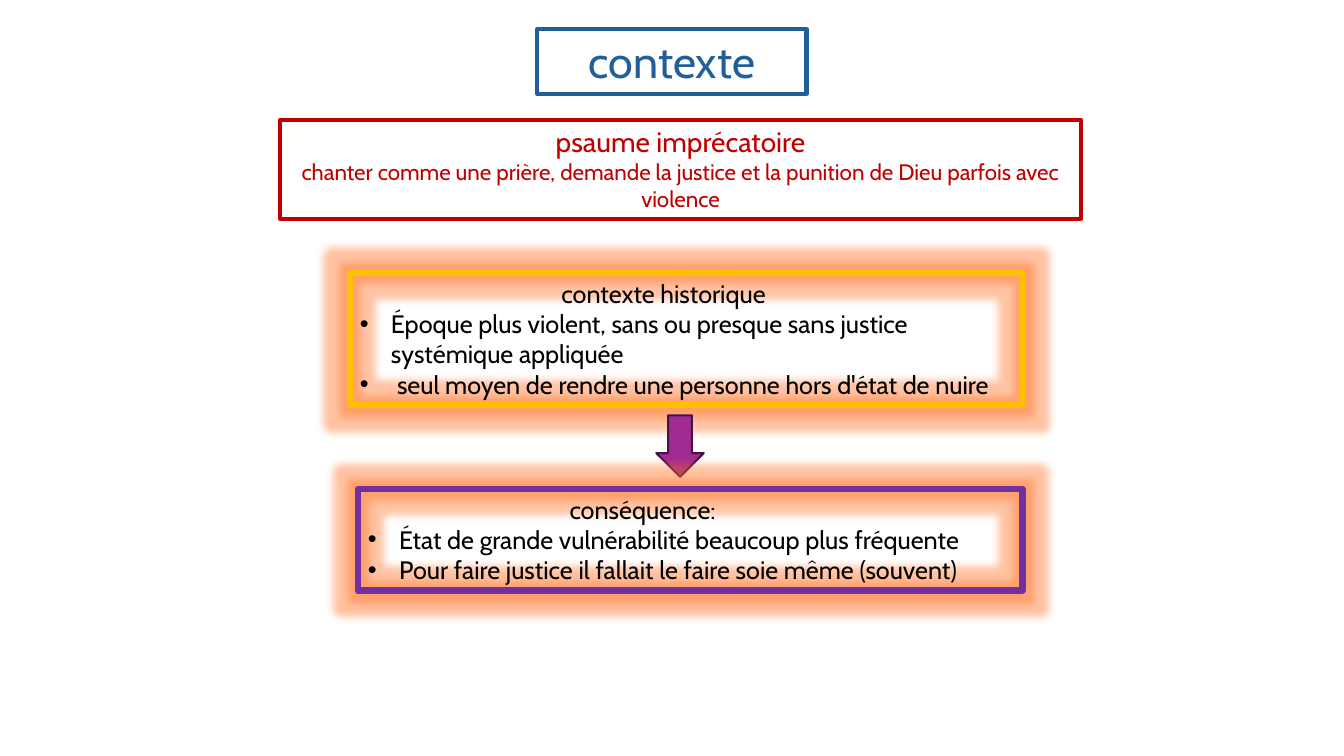
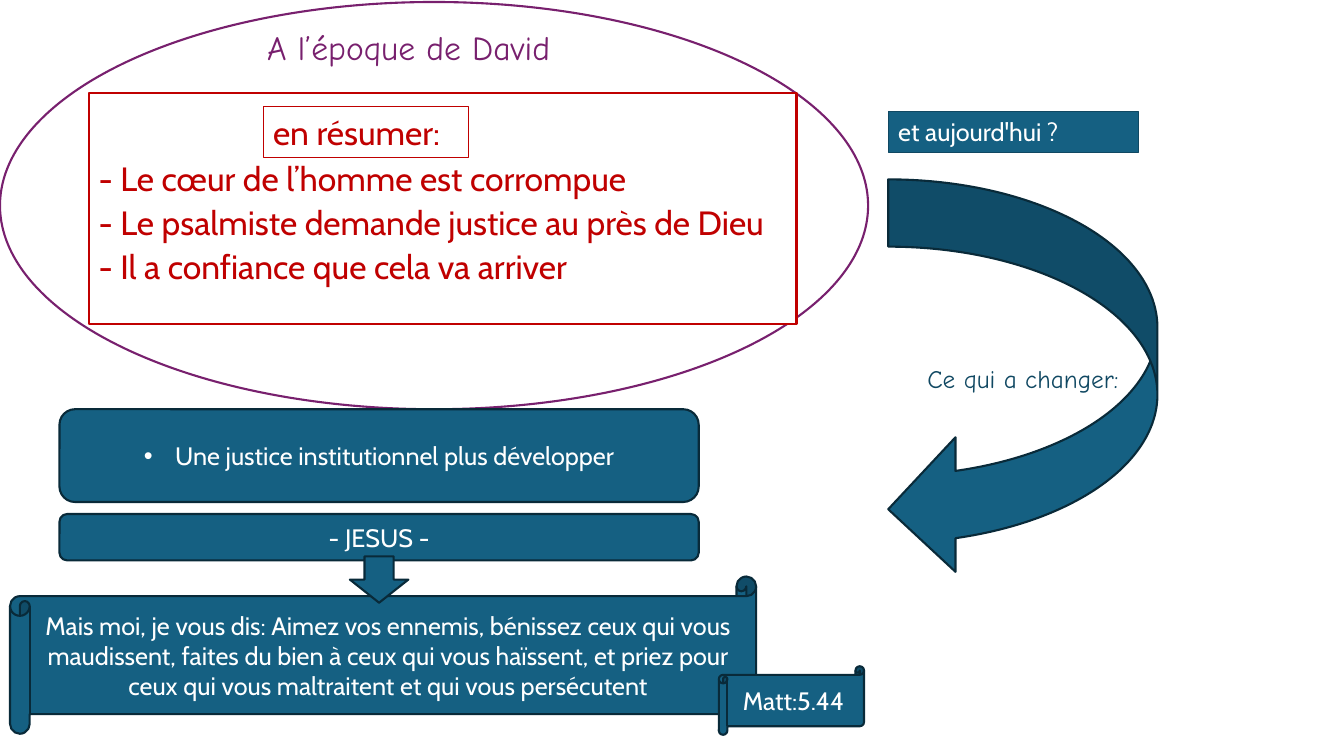
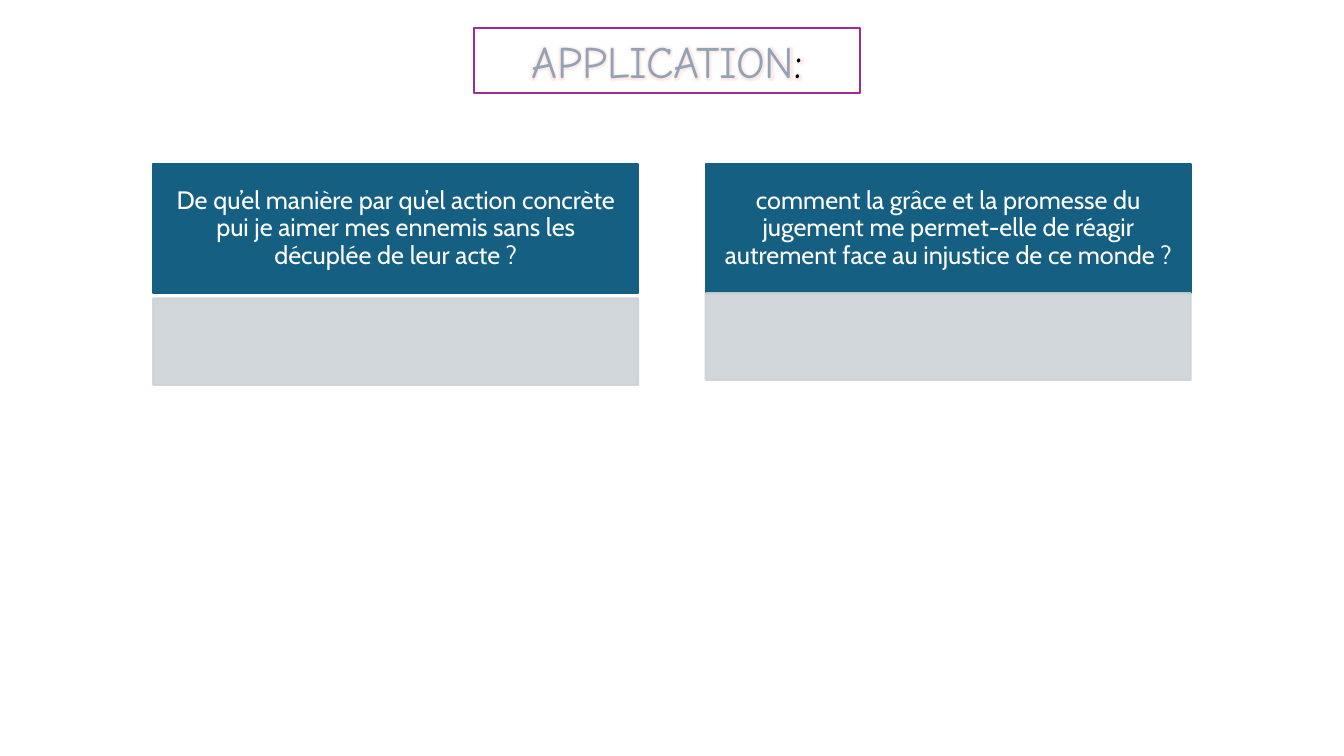
from lxml.etree import SubElement
from pptx import Presentation
from pptx.dml.color import RGBColor
from pptx.enum.shapes import MSO_SHAPE as SHAPE
from pptx.enum.text import MSO_ANCHOR as ANCHOR, PP_ALIGN as ALIGN
from pptx.oxml import parse_xml
from pptx.oxml.ns import nsdecls, qn
from pptx.util import Inches, Pt

SANS, HAND = "Cabin", "Comic Neue"
WHITE, BLACK, RED = "FFFFFF", "000000", "C00000"
TEAL, TEAL_DARK, TEAL_EDGE = "156082", "104862", "092A39"
BLUE, GOLD, VIOLET, GREY = "215F9A", "FFC000", "7030A0", "CCD2D8"
MAGENTA, MAGENTA_EDGE, PLUM = "A02B93", "461340", "78206E"
GLOW, TITLE_GLOW = "FF6A1A", "FF6A6A"
TITLE_SHADES = ((0, "9EAFBF"), (50, "91A3B4"), (100, "7C95AB"))
TITLE_OUTLINE = "74C4E9"


def color(value):
    return RGBColor.from_string(value)


def place(box):
    return [Inches(value) for value in box]


def draw(page, kind, box, fill=None, line=TEAL_EDGE, width=1.5):
    shape = page.shapes.add_shape(kind, *place(box))
    shape.shadow.inherit = False
    if fill:
        shape.fill.solid()
        shape.fill.fore_color.rgb = color(fill)
    else:
        shape.fill.background()
    shape.line.color.rgb = color(line)
    shape.line.width = Pt(width)
    return shape


def add_bullet(para, indent):
    props = para._p.get_or_add_pPr()
    props.set("marL", str(Inches(indent)))
    props.set("indent", str(-Inches(indent)))
    SubElement(props, qn("a:buFont"), typeface="Arial")
    SubElement(props, qn("a:buChar"), char="•")


def write(frame, texts, tint, sizes=(18,), font=SANS, align=ALIGN.LEFT,
          anchor=ANCHOR.TOP, bullets=None, gap=0):
    frame.word_wrap = True
    frame.vertical_anchor = anchor
    for index, text in enumerate(texts):
        para = frame.paragraphs[0] if index == 0 else frame.add_paragraph()
        para.alignment = align
        if index and gap:
            para.space_before = Pt(gap)
        if bullets and bullets[index]:
            add_bullet(para, bullets[index])
        para.add_run().text = text
        para.font.name = font
        para.font.size = Pt(sizes[min(index, len(sizes) - 1)])
        para.font.color.rgb = color(tint)
    return frame


def add_text(page, box, texts, tint, **style):
    return write(page.shapes.add_textbox(*place(box)).text_frame, texts, tint, **style)


def label(page, kind, box, text, fill=TEAL, line=TEAL_EDGE, bullets=None):
    shape = draw(page, kind, box, fill, line)
    write(shape.text_frame, [text], WHITE, align=ALIGN.CENTER,
          anchor=ANCHOR.MIDDLE, bullets=bullets)
    return shape


def glow_xml(tint, radius, alpha):
    return (f'<a:glow {nsdecls("a")} rad="{Pt(radius)}"><a:srgbClr val="{tint}">'
            f'<a:alpha val="{alpha * 1000}"/></a:srgbClr></a:glow>')


def glowing_panel(page, box, line, heading, items, indents):
    shape = draw(page, SHAPE.RECTANGLE, box, line=line, width=4.5)
    effects = shape._element.spPr.find(qn("a:effectLst"))
    effects.append(parse_xml(glow_xml(GLOW, 11, 40)))
    frame = write(shape.text_frame, [heading, *items], BLACK, bullets=(None, *indents))
    frame.paragraphs[0]._p.get_or_add_pPr().set("marL", str(Inches(2)))


def context_slide(page):
    title = draw(page, SHAPE.RECTANGLE, (5.33, 0.29, 2.67, 0.64), line=BLUE, width=3)
    write(title.text_frame, ["contexte"], BLUE, sizes=(32,), align=ALIGN.CENTER)
    psalm = draw(page, SHAPE.RECTANGLE, (2.78, 1.19, 7.94, 0.98), line=RED, width=3)
    write(psalm.text_frame, [
        "psaume imprécatoire",
        "chanter comme une prière, demande la justice et la punition de Dieu "
        "parfois avec violence"], RED, sizes=(20, 16), align=ALIGN.CENTER)
    glowing_panel(page, (3.47, 2.71, 6.67, 1.31), GOLD, "contexte historique", [
        "Époque plus violent, sans ou presque sans justice systémique appliquée",
        "seul moyen de rendre une personne hors d'état de nuire"], (0.31, 0.37))
    draw(page, SHAPE.DOWN_ARROW, (6.51, 4.12, 0.47, 0.61), MAGENTA, MAGENTA_EDGE)
    glowing_panel(page, (3.55, 4.85, 6.59, 1.01), VIOLET, "conséquence:", [
        "État de grande vulnérabilité beaucoup plus fréquente",
        "Pour faire justice il fallait le faire soie même (souvent)"], (0.31, 0.31))


def david_summary(page, left, top):
    draw(page, SHAPE.OVAL, (left, top, 8.61, 4.04), WHITE, PLUM)
    add_text(page, (left + 2.55, top + 0.2, 3.52, 0.5), ["A l’époque de David"],
             PLUM, sizes=(24,), font=HAND)
    draw(page, SHAPE.RECTANGLE, (left + 0.88, top + 0.9, 7.02, 2.29), WHITE, RED)
    heading = draw(page, SHAPE.RECTANGLE, (left + 2.61, top + 1.04, 2.04, 0.5),
                   line=RED, width=0.75)
    write(heading.text_frame, ["en résumer:"], RED, sizes=(24,))
    add_text(page, (left + 0.88, top + 1.5, 7.82, 1.37), [
        "- Le cœur de l’homme est corrompue",
        "- Le psalmiste demande justice au près de Dieu",
        "- Il a confiance que cela va arriver"], RED, sizes=(24,), gap=2.4)


def today_arrow(page, left, top):
    question = draw(page, SHAPE.RECTANGLE, (left, top, 2.48, 0.4), TEAL, TEAL_DARK, 0.75)
    write(question.text_frame, ["et aujourd'hui ?"], WHITE)
    arrow = draw(page, SHAPE.CURVED_LEFT_ARROW, (left, top + 0.67, 2.67, 3.94), TEAL)
    write(arrow.text_frame, ["Ce qui a changer:"], TEAL_DARK, font=HAND,
          align=ALIGN.CENTER, anchor=ANCHOR.MIDDLE)


def changes(page, left, top):
    label(page, SHAPE.ROUNDED_RECTANGLE, (left, top, 6.34, 0.92),
          "Une justice institutionnel plus développer", bullets=(0.31,))
    label(page, SHAPE.ROUNDED_RECTANGLE, (left, top + 1.04, 6.34, 0.46), "- JESUS -")
    label(page, SHAPE.HORIZONTAL_SCROLL, (left - 0.49, top + 1.66, 7.4, 1.56),
          "Mais moi, je vous dis: Aimez vos ennemis, bénissez ceux qui vous "
          "maudissent, faites du bien à ceux qui vous haïssent, et priez pour "
          "ceux qui vous maltraitent et qui vous persécutent")
    label(page, SHAPE.HORIZONTAL_SCROLL, (left + 6.54, top + 2.55, 1.44, 0.68), "Matt:5.44")
    draw(page, SHAPE.DOWN_ARROW, (left + 2.88, top + 1.46, 0.58, 0.46), TEAL)


def today_slide(page):
    david_summary(page, 0, 0.02)
    today_arrow(page, 8.81, 1.11)
    changes(page, 0.59, 4.06)


def application_title(page, box):
    shape = draw(page, SHAPE.RECTANGLE, box, WHITE, MAGENTA)
    frame = write(shape.text_frame, ["APPLICATION"], BLACK, sizes=(32,), font=HAND,
                  align=ALIGN.CENTER, anchor=ANCHOR.MIDDLE)
    para = frame.paragraphs[0]
    stops = "".join(f'<a:gs pos="{place_at * 1000}"><a:srgbClr val="{shade}"/></a:gs>'
                    for place_at, shade in TITLE_SHADES)
    props = para.runs[0]._r.get_or_add_rPr()
    for xml in (
        f'<a:ln {nsdecls("a")} w="{Pt(0.75)}"><a:solidFill>'
        f'<a:srgbClr val="{TITLE_OUTLINE}"/></a:solidFill></a:ln>',
        f'<a:gradFill {nsdecls("a")}><a:gsLst>{stops}</a:gsLst>'
        '<a:lin ang="5400000" scaled="0"/></a:gradFill>',
        f'<a:effectLst {nsdecls("a")}>{glow_xml(TITLE_GLOW, 5, 15)}</a:effectLst>',
    ):
        props.append(parse_xml(xml))
    para.add_run().text = ":"


def question_card(page, left, top, text, gap):
    header = label(page, SHAPE.RECTANGLE, (left, top, 4.81, 1.28), text, line=TEAL)
    frame = header.text_frame
    frame.margin_left = frame.margin_right = Inches(0.14)
    frame.margin_top = frame.margin_bottom = Inches(0.08)
    frame.paragraphs[0].line_spacing = 0.9
    answer = draw(page, SHAPE.RECTANGLE, (left, top + 1.28 + gap, 4.81, 0.86), GREY, GREY)
    for tint in answer._element.spPr.iter(qn("a:srgbClr")):
        SubElement(tint, qn("a:alpha"), val="90000")


def application_slide(page):
    application_title(page, (4.7, 0.28, 3.83, 0.64))
    question_card(page, 1.52, 1.63, "De qu’el manière par qu’el action concrète pui je "
                  "aimer mes ennemis sans les décuplée de leur acte ?", 0.05)
    question_card(page, 7, 1.63, "comment la grâce et la promesse du jugement me "
                  "permet-elle de réagir autrement face au injustice de ce monde ?", 0)


def main():
    deck = Presentation()
    deck.slide_width, deck.slide_height = Inches(13.33), Inches(7.5)
    for build in (context_slide, today_slide, application_slide):
        build(deck.slides.add_slide(deck.slide_layouts[6]))
    deck.save("out.pptx")


if __name__ == "__main__":
    main()
